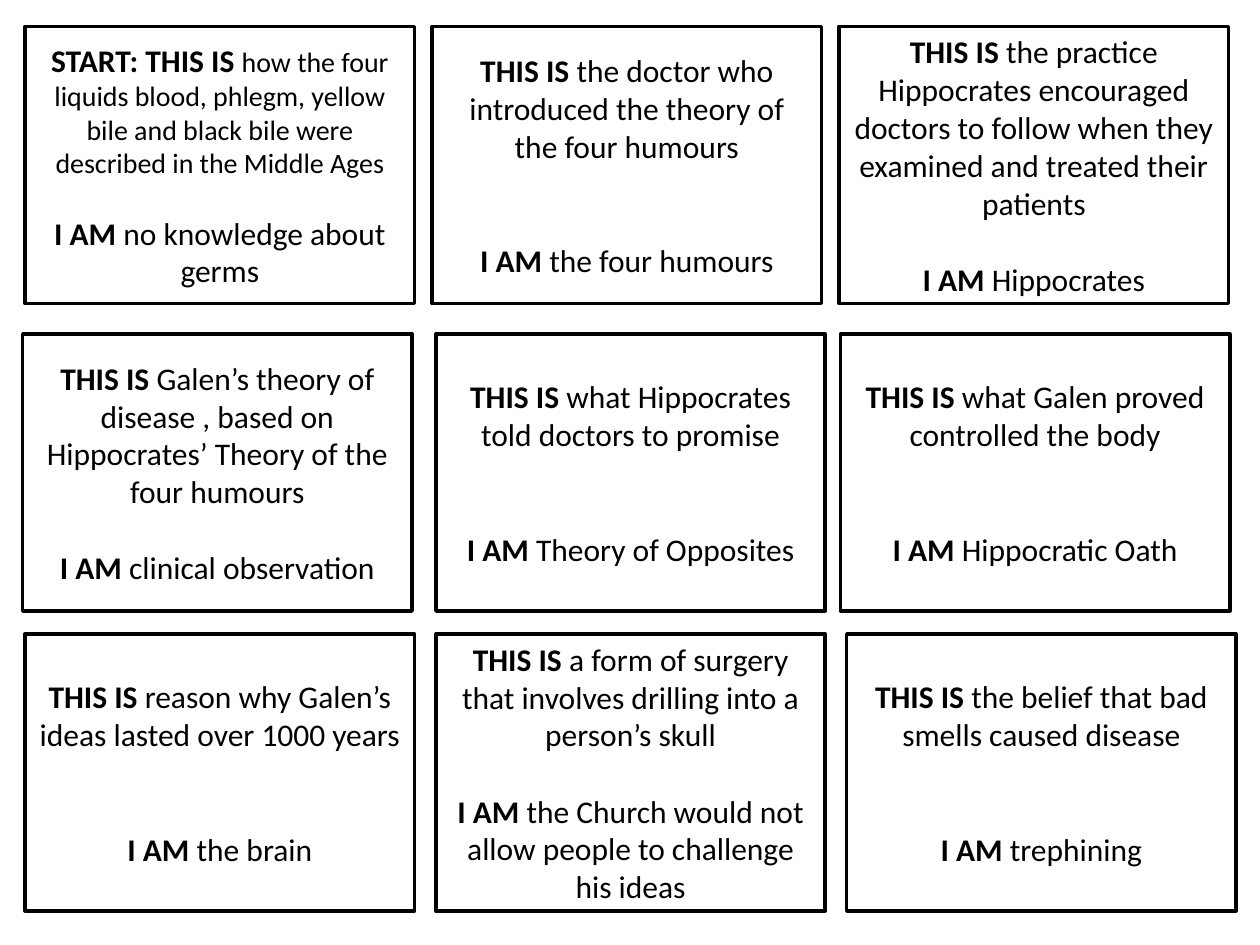
from dataclasses import dataclass

from pptx import Presentation
from pptx import util as u
from pptx.dml.color import RGBColor
from pptx.enum import shapes, text


@dataclass(frozen=True)
class Theme:
    ink: RGBColor = RGBColor(0, 0, 0)
    paper: RGBColor = RGBColor(255, 255, 255)
    font: str = "Calibri"
    body: int = 18
    small: int = 16
    border: int = 2
    line_height: float = 1.22


theme = Theme()

prs = Presentation()
prs.slide_width, prs.slide_height = u.Inches(10), u.Inches(7.5)
col, row = prs.slide_width / 100, prs.slide_height / 100
s = prs.slides.add_slide(prs.slide_layouts[6])

card_w, card_h = 30.9, 29.33
rows = [
    (2.8, (2, 34.3, 66.6), [
        ("START: THIS IS", "how the four liquids blood, phlegm, yellow bile and black bile "
         "were described in the Middle Ages", "no knowledge about germs", 1, theme.small),
        ("THIS IS", "the doctor who introduced the theory of the four humours",
         "the four humours", 2, theme.body),
        ("THIS IS", "the practice Hippocrates encouraged doctors to follow when they "
         "examined and treated their patients", "Hippocrates", 1, theme.body),
    ]),
    (35.33, (1.8, 34.6, 66.7), [
        ("THIS IS", "Galen’s theory of disease , based on Hippocrates’ Theory of the "
         "four humours", "clinical observation", 1, theme.body),
        ("THIS IS", "what Hippocrates told doctors to promise",
         "Theory of Opposites", 2, theme.body),
        ("THIS IS", "what Galen proved controlled the body",
         "Hippocratic Oath", 2, theme.body),
    ]),
    (67.07, (2, 34.6, 67.2), [
        ("THIS IS", "reason why Galen’s ideas lasted over 1000 years",
         "the brain", 2, theme.body),
        ("THIS IS", "a form of surgery that involves drilling into a person’s skull",
         "the Church would not allow people to challenge his ideas", 1, theme.body),
        ("THIS IS", "the belief that bad smells caused disease",
         "trephining", 2, theme.body),
    ]),
]


def write(p, label, words, size):
    p.alignment = text.PP_ALIGN.CENTER
    for content, bold, pt in ((label + " ", True, theme.body), (words, False, size)):
        r = p.add_run()
        r.text = content
        r.font.name, r.font.size, r.font.bold = theme.font, u.Pt(pt), bold
        r.font.color.rgb = theme.ink


for top, lefts, cards in rows:
    for left, (label, clue, answer, gap_lines, size) in zip(lefts, cards):
        sp = s.shapes.add_shape(shapes.MSO_SHAPE.RECTANGLE, round(left * col), round(top * row),
                                round(card_w * col), round(card_h * row))
        sp.shadow.inherit = False
        sp.fill.solid()
        sp.fill.fore_color.rgb = theme.paper
        sp.line.color.rgb = theme.ink
        sp.line.width = u.Pt(theme.border)
        tf = sp.text_frame
        tf.word_wrap = True
        tf.vertical_anchor = text.MSO_ANCHOR.MIDDLE
        write(tf.paragraphs[0], label, clue, size)
        p = tf.add_paragraph()
        p.space_before = u.Pt(gap_lines * size * theme.line_height)
        write(p, "I AM", answer, theme.body)

prs.save("out.pptx")
